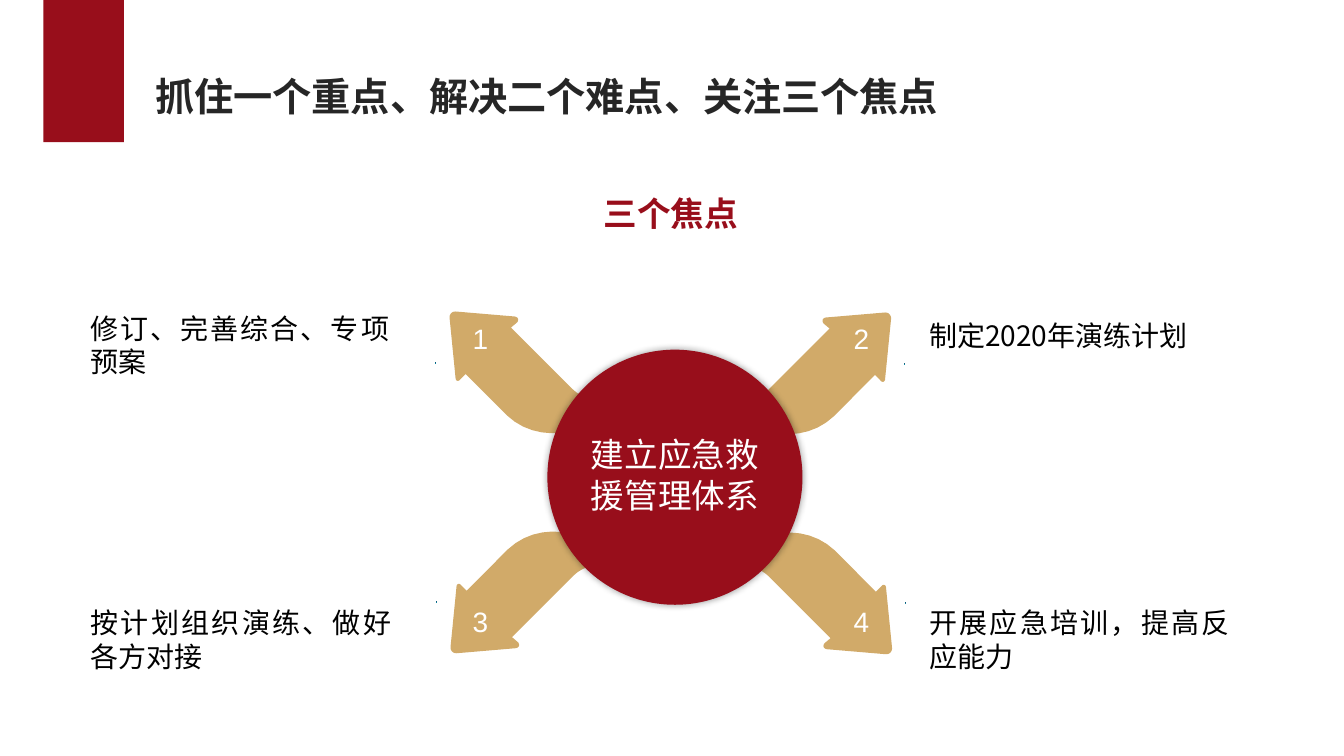
from dataclasses import dataclass
from typing import NamedTuple

from lxml.etree import SubElement
from pptx import Presentation
from pptx.dml.color import RGBColor
from pptx.enum.shapes import MSO_SHAPE
from pptx.enum.text import MSO_ANCHOR, MSO_AUTO_SIZE, PP_ALIGN
from pptx.oxml.ns import qn
from pptx.util import Pt


@dataclass(frozen=True)
class Theme:
    red: str = "980E1B"
    gold: str = "D1AA69"
    navy: str = "173555"
    cyan: str = "00A7C3"
    title_ink: str = "262626"
    ink: str = "000000"
    white: str = "FFFFFF"
    han_font: str = "Noto Sans CJK SC"
    digit_font: str = "Arial"
    title_size: float = 28
    heading_size: float = 24
    body_size: float = 20


class Point(NamedTuple):
    x: float
    y: float


class Box(NamedTuple):
    left: float
    top: float
    width: float
    height: float


@dataclass(frozen=True)
class Focus:
    """One arrow: its tip, the direction towards the hub, its number and its text."""
    tip: Point
    inward: Point
    number_box: Box
    text: str
    text_box: Box
    align: PP_ALIGN = PP_ALIGN.JUSTIFY
    line_spacing: float = 1.0


THEME = Theme()

FOCUSES = [
    Focus(Point(321.1, 222.5), Point(1, 1), Box(327.6, 226.1, 31, 31.7),
          "修订、完善综合、专项预案", Box(57.6, 218.9, 227.5, 55.4)),
    Focus(Point(636.5, 223.2), Point(-1, 1), Box(599.8, 226.1, 31, 31.7),
          "制定2020年演练计划", Box(656.6, 216.7, 208.8, 36), PP_ALIGN.LEFT, 1.3),
    Focus(Point(321.8, 466.6), Point(1, -1), Box(327.6, 428.4, 31, 31.7),
          "按计划组织演练、做好各方对接", Box(57.6, 429.1, 229, 55.4)),
    Focus(Point(637.2, 467.3), Point(-1, -1), Box(599.8, 428.4, 31, 31.7),
          "开展应急培训，提高反应能力", Box(656.6, 429.1, 229, 55.4)),
]

# Offsets from the tip: one point is a straight edge, three are a Bézier curve.
ARROW_START = Point(87.8, 55.4)
ARROW_EDGES = [
    [Point(96.5, 64.1), Point(110.9, 65.5), Point(121, 56.9)],
    [Point(103.7, 74.9)],
    [Point(87.1, 91.4), Point(58.3, 90.7), Point(41, 74.2)],
    [Point(11.5, 44.6)],
    [Point(7.9, 48.2)],
    [Point(6.5, 50.4), Point(4.3, 49.7), Point(4.3, 47.5)],
    [Point(0, 4.3)],
    [Point(0, 2.2), Point(1.4, 0), Point(4.3, 0)],
    [Point(46.8, 3.6)],
    [Point(49, 4.3), Point(49.7, 5.8), Point(48.2, 7.9)],
    [Point(43.9, 11.5)],
    [Point(72.7, 40.3)],
]
SPECKS = [
    [Point(55.4, 36), Point(54.7, 36.7), Point(55.1, 36)],
    [Point(-10.1, 36), Point(-9.4, 37.4), Point(-10.1, 36.7)],
]


def bezier(start: Point, first: Point, second: Point, end: Point, steps: int = 10) -> list[Point]:
    points = []
    for step in range(1, steps + 1):
        t = step / steps
        weights = ((1 - t) ** 3, 3 * t * (1 - t) ** 2, 3 * t * t * (1 - t), t ** 3)
        controls = (start, first, second, end)
        points.append(Point(sum(w * c.x for w, c in zip(weights, controls)),
                            sum(w * c.y for w, c in zip(weights, controls))))
    return points


def arrow_outline() -> list[Point]:
    outline = [ARROW_START]
    for edge in ARROW_EDGES:
        outline += edge if len(edge) == 1 else bezier(outline[-1], *edge)
    return outline


def place(shape, box: Box) -> None:
    shape.left, shape.top, shape.width, shape.height = (Pt(length) for length in box)


def paint(shape, color: str) -> None:
    shape.fill.solid()
    shape.fill.fore_color.rgb = RGBColor.from_string(color)
    shape.line.fill.background()
    shape.shadow.inherit = False


def paint_gradient(shape, top: str, bottom: str) -> None:
    shape.fill.gradient()
    shape.fill.gradient_angle = 270
    for stop, color in zip(shape.fill.gradient_stops, (top, bottom)):
        stop.color.rgb = RGBColor.from_string(color)
    shape.line.fill.background()
    shape.shadow.inherit = False


def add_glow_shadow(shape, blur: float, alpha: int) -> None:
    """Put a soft black shadow evenly around the shape."""
    effects = shape._element.spPr.find(qn("a:effectLst"))
    shadow = SubElement(effects, qn("a:outerShdw"), blurRad=str(Pt(blur)), dist="0",
                        dir="0", algn="ctr", rotWithShape="0")
    black = SubElement(shadow, qn("a:srgbClr"), val=THEME.ink)
    SubElement(black, qn("a:alpha"), val=str(alpha * 1000))


def write(shape, text: str, *, size: float, color: str, font: str = THEME.han_font,
          bold: bool = False, align: PP_ALIGN = PP_ALIGN.CENTER,
          line_spacing: float = 1.0, wrap: bool = True) -> None:
    frame = shape.text_frame
    frame.word_wrap = wrap
    frame.auto_size = MSO_AUTO_SIZE.SHAPE_TO_FIT_TEXT
    frame.vertical_anchor = MSO_ANCHOR.TOP
    paragraph = frame.paragraphs[0]
    paragraph.alignment = align
    paragraph.line_spacing = line_spacing
    run = paragraph.add_run()
    run.text = text
    run.font.size = Pt(size)
    run.font.bold = bold
    run.font.color.rgb = RGBColor.from_string(color)
    run.font.name = font
    SubElement(run._r.get_or_add_rPr(), qn("a:ea"), typeface=font)


def add_text(slide, box: Box, text: str, **style) -> None:
    write(slide.shapes.add_textbox(*(Pt(length) for length in box)), text, **style)


def add_outline(shapes, focus: Focus, offsets: list[Point]):
    """Draw offsets from the tip, mirrored to run towards the hub."""
    corners = [(Pt(focus.tip.x + focus.inward.x * offset.x),
                Pt(focus.tip.y + focus.inward.y * offset.y)) for offset in offsets]
    builder = shapes.build_freeform(*corners[0])
    builder.add_line_segments(corners[1:], close=True)
    return builder.convert_to_shape()


def add_arrow(slide, focus: Focus) -> None:
    group = slide.shapes.add_group_shape()
    for speck in SPECKS:
        paint_gradient(add_outline(group.shapes, focus, speck), THEME.navy, THEME.cyan)
    paint(add_outline(group.shapes, focus, arrow_outline()), THEME.gold)


def add_block(slide, kind: MSO_SHAPE, box: Box):
    block = slide.shapes.add_shape(kind, *(Pt(length) for length in box))
    paint(block, THEME.red)
    return block


def main() -> None:
    deck = Presentation()
    deck.slide_width, deck.slide_height = Pt(960), Pt(540)
    slide = deck.slides.add_slide(deck.slide_layouts[5])

    title = slide.shapes.title
    place(title, Box(103.7, 48.2, 580.3, 41))
    write(title, "抓住一个重点、解决二个难点、关注三个焦点", size=THEME.title_size,
          color=THEME.title_ink, bold=True, align=PP_ALIGN.LEFT, wrap=False)
    add_block(slide, MSO_SHAPE.RECTANGLE, Box(31, 0, 57.6, 101.5))

    for focus in FOCUSES:
        add_arrow(slide, focus)
    hub = add_block(slide, MSO_SHAPE.OVAL, Box(391, 249.8, 182.2, 182.2))
    add_glow_shadow(hub, blur=5, alpha=40)

    for number, focus in enumerate(FOCUSES, start=1):
        add_text(slide, focus.text_box, focus.text, size=THEME.body_size, color=THEME.ink,
                 align=focus.align, line_spacing=focus.line_spacing)
        add_text(slide, focus.number_box, str(number), size=THEME.body_size,
                 color=THEME.white, font=THEME.digit_font)
    add_text(slide, Box(403.2, 306.7, 157.7, 65.5), "建立应急救援管理体系",
             size=THEME.heading_size, color=THEME.white)
    add_text(slide, Box(397.4, 134.6, 163.4, 36), "三个焦点",
             size=THEME.heading_size, color=THEME.red, bold=True)
    deck.save("out.pptx")


if __name__ == "__main__":
    main()
